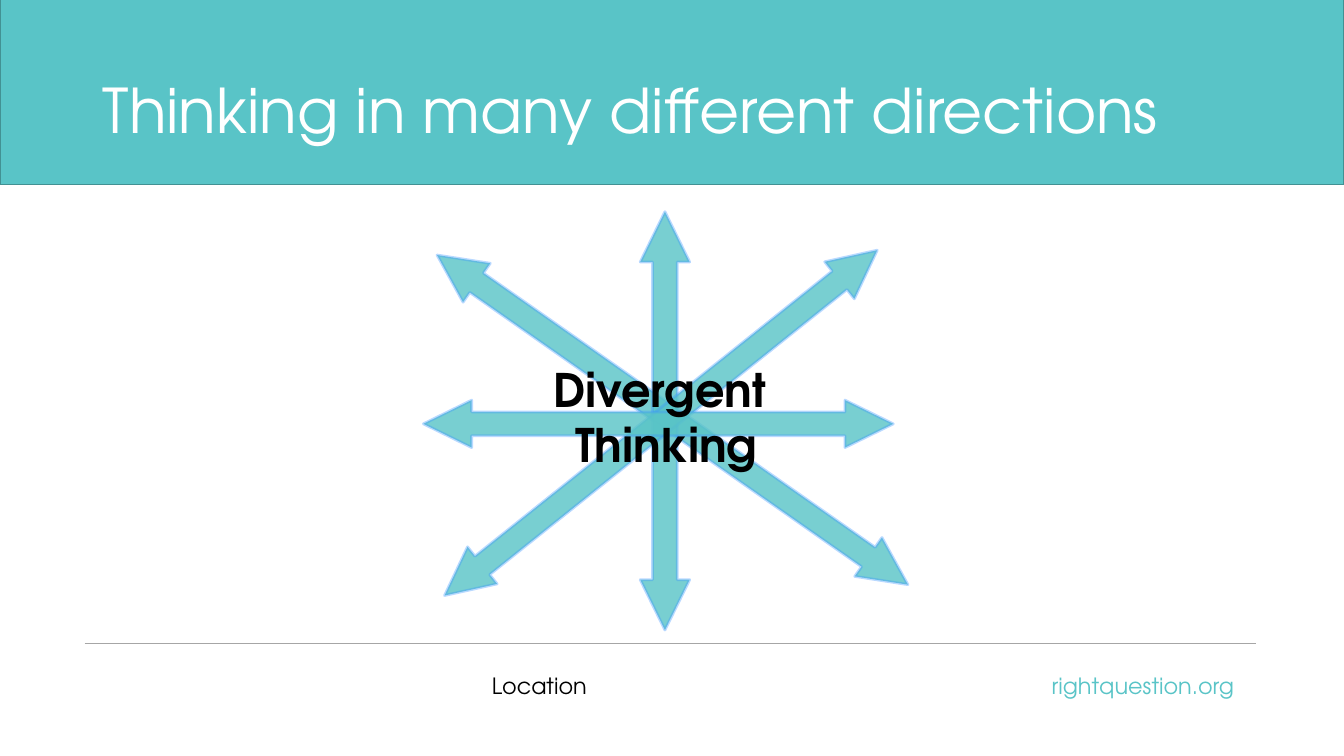
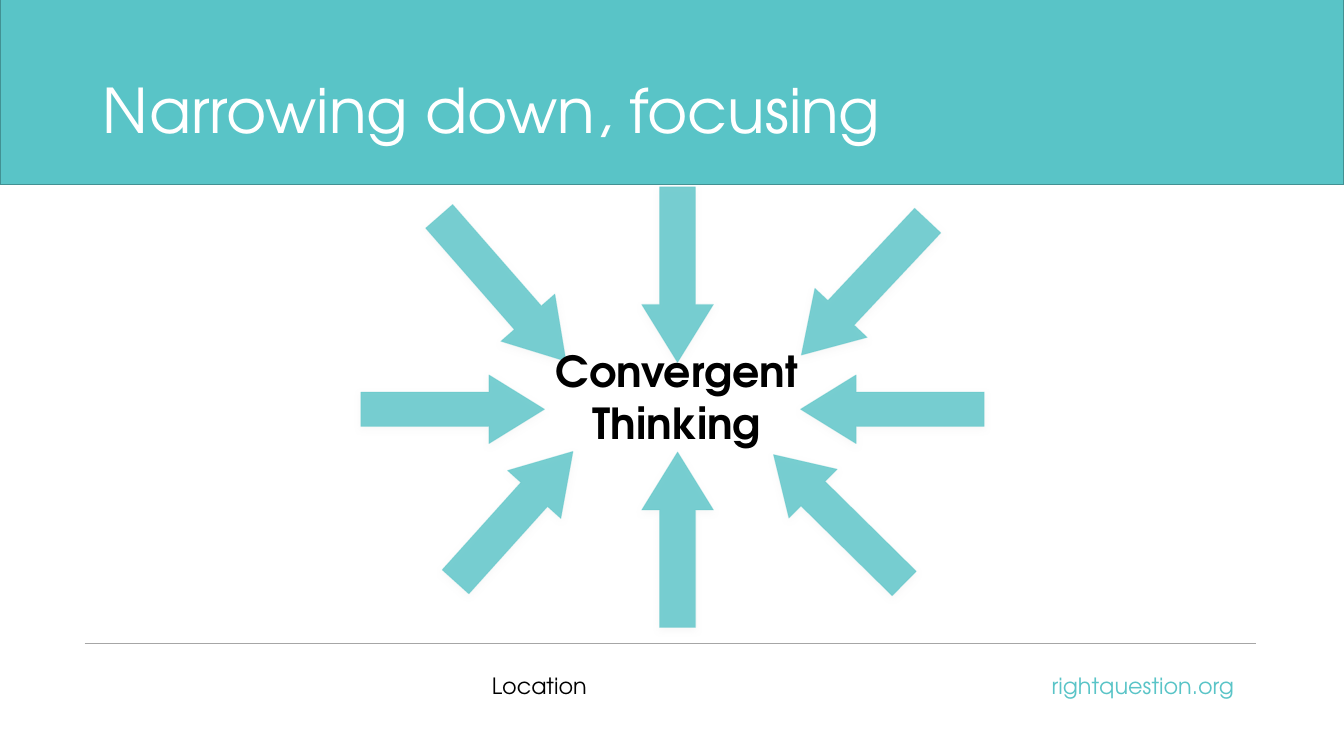
from dataclasses import dataclass

from lxml import etree
from pptx import Presentation
from pptx.dml.color import RGBColor
from pptx.enum.shapes import MSO_CONNECTOR, MSO_SHAPE
from pptx.enum.text import MSO_ANCHOR, MSO_AUTO_SIZE, PP_ALIGN
from pptx.oxml.ns import qn
from pptx.util import Inches, Pt

LEFT, CENTER, RIGHT = PP_ALIGN.LEFT, PP_ALIGN.CENTER, PP_ALIGN.RIGHT
TOP, MIDDLE, BOTTOM = MSO_ANCHOR.TOP, MSO_ANCHOR.MIDDLE, MSO_ANCHOR.BOTTOM
NO_FIT = MSO_AUTO_SIZE.NONE
RECT, STRAIGHT = MSO_SHAPE.RECTANGLE, MSO_CONNECTOR.STRAIGHT
DOUBLE_ARROW, LEFT_ARROW = MSO_SHAPE.LEFT_RIGHT_ARROW, MSO_SHAPE.LEFT_ARROW


@dataclass(frozen=True)
class Theme:
    font: str = "TeX Gyre Adventor"
    teal: str = "59C4C7"
    teal_dark: str = "429193"
    blue: str = "3A93FF"
    rule: str = "A6A6A6"
    shadow: str = "E7E6E6"
    black: str = "000000"
    white: str = "FFFFFF"
    title_size: float = 44
    footer_size: float = 16
    divergent_size: float = 33
    convergent_size: float = 30.5
    fill_alpha: int = 81
    line_alpha: int = 34
    shadow_alpha: int = 35


THEME = Theme()


def rgb(value):
    return RGBColor.from_string(value)


def set_attrs(target, values):
    for name, value in values.items():
        setattr(target, name, value)


def add_alpha(color, percent):
    etree.SubElement(color, qn("a:alpha"), val=str(percent * 1000))


class Deck:
    """Holds the style and the slide being built."""

    def __init__(self, theme):
        self.theme = theme
        self.prs = Presentation()
        self.prs.slide_width, self.prs.slide_height = Inches(13.33), Inches(7.5)
        self.slide = None

    def new_slide(self, title):
        t = self.theme
        self.slide = self.prs.slides.add_slide(self.prs.slide_layouts[5])
        # Band, rule and footers
        self.shape(RECT, (0, -0.02, 13.33, 1.85), t.teal, t.teal_dark, 1)
        self.rule(0.84, 12.46, 6.38)
        self.text((4.78, 6.65, 3.01, 0.67), ["Location"], t.footer_size, spacing=0.9)
        self.text((9.33, 6.65, 3.01, 0.67), ["rightquestion.org"], t.footer_size,
                  color=t.teal, align=RIGHT, spacing=0.9)
        # Title, in front of the band
        sp = self.slide.shapes.title
        sp.element.getparent().append(sp.element)
        set_attrs(sp, dict(zip(("left", "top", "width", "height"),
                               map(Inches, (0.92, 0.4, 11.5, 1.45)))))
        self.fill_text(sp, [title], t.title_size, t.white, LEFT, MIDDLE, spacing=0.9)

    def fill_text(self, sp, lines, size, color, align, anchor, bold=False, spacing=1.0):
        tf = sp.text_frame
        set_attrs(tf, {"word_wrap": True, "auto_size": NO_FIT, "vertical_anchor": anchor})
        for i, line in enumerate(lines):
            p = tf.add_paragraph() if i else tf.paragraphs[0]
            set_attrs(p, {"alignment": align, "line_spacing": spacing})
            r = p.add_run()
            r.text = line
            set_attrs(r.font, {"name": self.theme.font, "size": Pt(size), "bold": bold})
            r.font.color.rgb = rgb(color)

    def text(self, box, lines, size, color=None, align=LEFT, anchor=TOP, **style):
        sp = self.slide.shapes.add_textbox(*map(Inches, box))
        self.fill_text(sp, lines, size, color or self.theme.black, align, anchor, **style)

    def shape(self, kind, box, fill, line, width):
        sp = self.slide.shapes.add_shape(kind, *map(Inches, box))
        sp.shadow.inherit = False
        sp.fill.solid()
        sp.fill.fore_color.rgb = rgb(fill)
        sp.line.color.rgb = rgb(line)
        sp.line.width = Pt(width)
        return sp

    def rule(self, left, right, y):
        line = self.slide.shapes.add_connector(
            STRAIGHT, Inches(left), Inches(y), Inches(right), Inches(y))
        line.line.color.rgb = rgb(self.theme.rule)
        line.line.width = Pt(0.5)
        etree.SubElement(line.element.spPr, qn("a:effectLst"))

    def arrow(self, kind, box, rotation, head, line, width, shadow=False):
        t = self.theme
        sp = self.shape(kind, box, t.teal, line, width)
        sp.rotation = rotation
        sp.adjustments[0], sp.adjustments[1] = 0.5, head
        spPr = sp.element.spPr
        colors = list(spPr.iter(qn("a:srgbClr")))
        for color, percent in zip(colors, (t.fill_alpha, t.line_alpha)):
            add_alpha(color, percent)
        if shadow:
            outer = etree.SubElement(
                spPr.find(qn("a:effectLst")), qn("a:outerShdw"), blurRad=str(Pt(5)),
                dist=str(Pt(1.8)), dir="5400000", rotWithShape="0")
            color = etree.SubElement(outer, qn("a:srgbClr"), val=t.shadow)
            add_alpha(color, t.shadow_alpha)

    def heading(self, box, lines, size):
        self.text(box, lines, size, align=CENTER, anchor=BOTTOM, bold=True)


def divergent(deck):
    t = deck.theme
    deck.new_slide("Thinking in many different directions")
    # Double arrows crossing at the centre: box, rotation
    for box, rotation in (
        ((3.82, 3.93, 5.7, 0.47), 215),
        ((4.52, 3.93, 4.15, 0.49), 270),
        ((3.81, 3.96, 5.49, 0.47), 141.4),
        ((4.2, 3.97, 4.66, 0.47), 0),
    ):
        deck.arrow(DOUBLE_ARROW, box, rotation, 1.018, t.blue, 2)
    deck.heading((4.31, 3.35, 4.6, 1.38), ["Divergent ", "Thinking"], t.divergent_size)


def convergent(deck):
    t = deck.theme
    deck.new_slide("Narrowing down, focusing")
    # Arrows pointing at the centre: box, rotation
    for box, rotation in (
        ((4.03, 2.51, 1.91, 0.71), 228.8),
        ((3.58, 3.72, 1.82, 0.68), 180),
        ((7.94, 3.72, 1.82, 0.68), 0),
        ((5.85, 2.37, 1.74, 0.71), 270),
        ((7.66, 2.5, 1.83, 0.71), 313.2),
        ((4.23, 4.77, 1.74, 0.71), 132),
        ((5.85, 5, 1.74, 0.71), 90),
        ((7.41, 4.81, 1.82, 0.68), 44.6),
    ):
        deck.arrow(LEFT_ARROW, box, rotation, 0.809, t.teal, 0.75, shadow=True)
    deck.heading((5.11, 3.41, 3.21, 1.08), ["Convergent", "Thinking"], t.convergent_size)


def main():
    deck = Deck(THEME)
    divergent(deck)
    convergent(deck)
    deck.prs.save("out.pptx")


if __name__ == "__main__":
    main()
